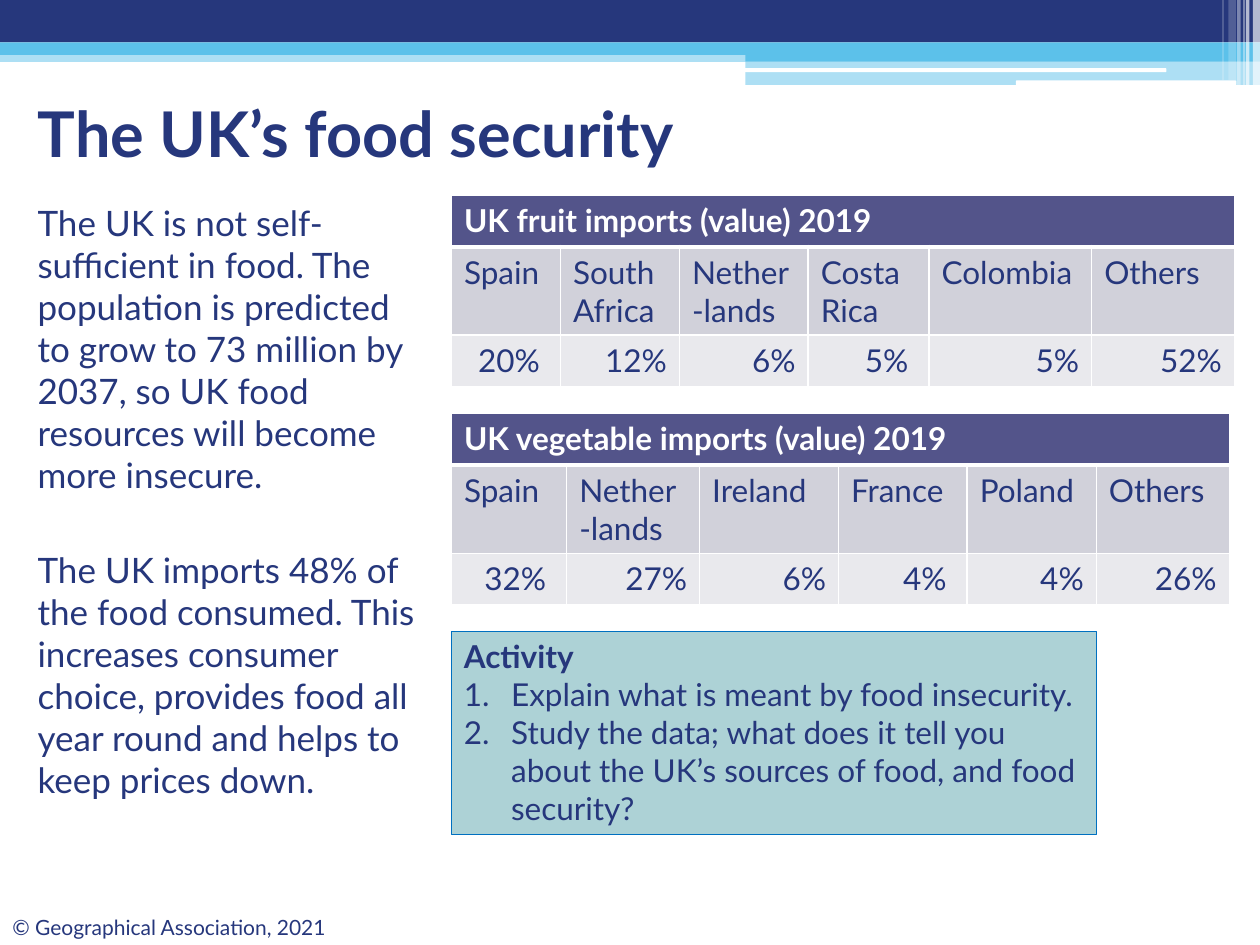
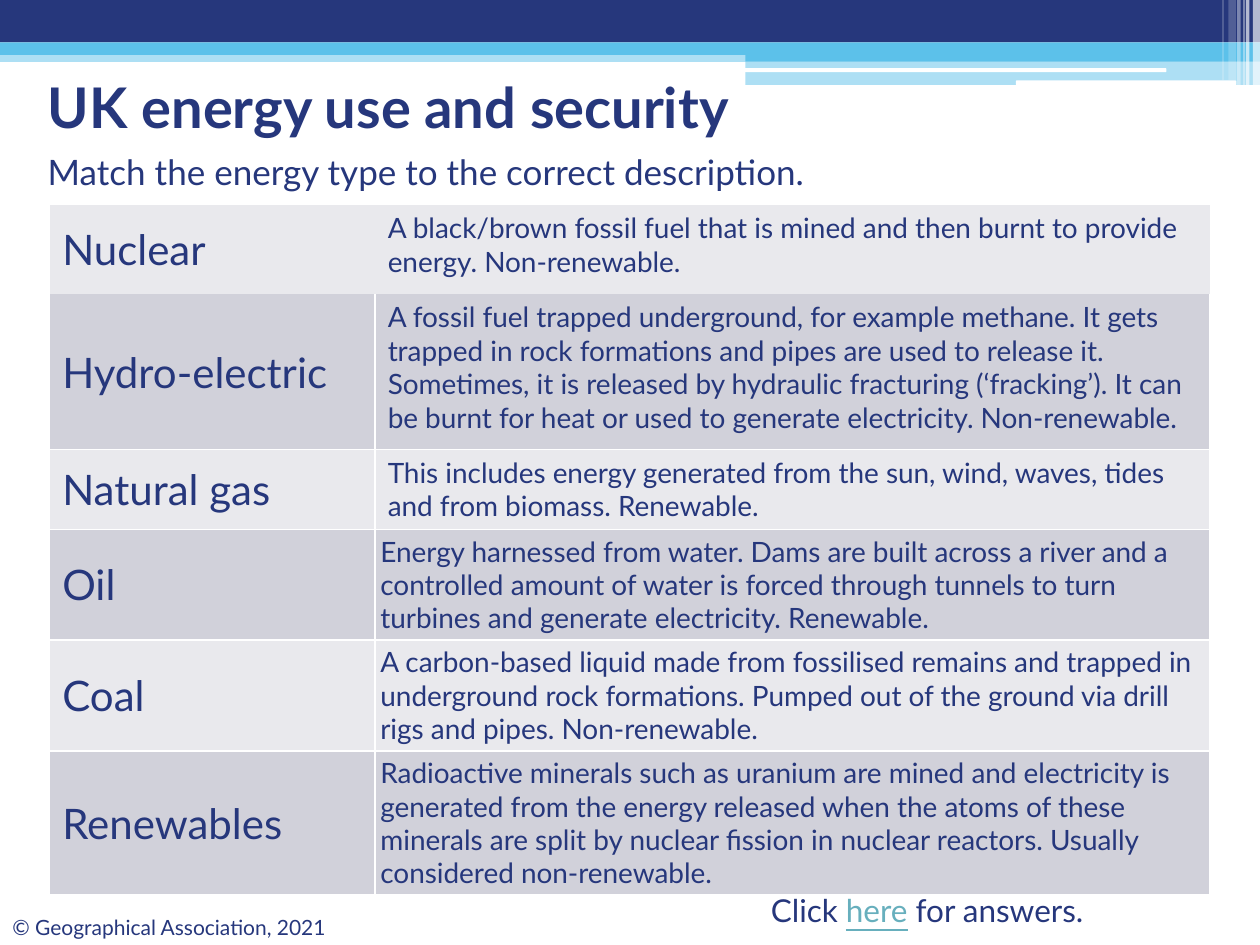
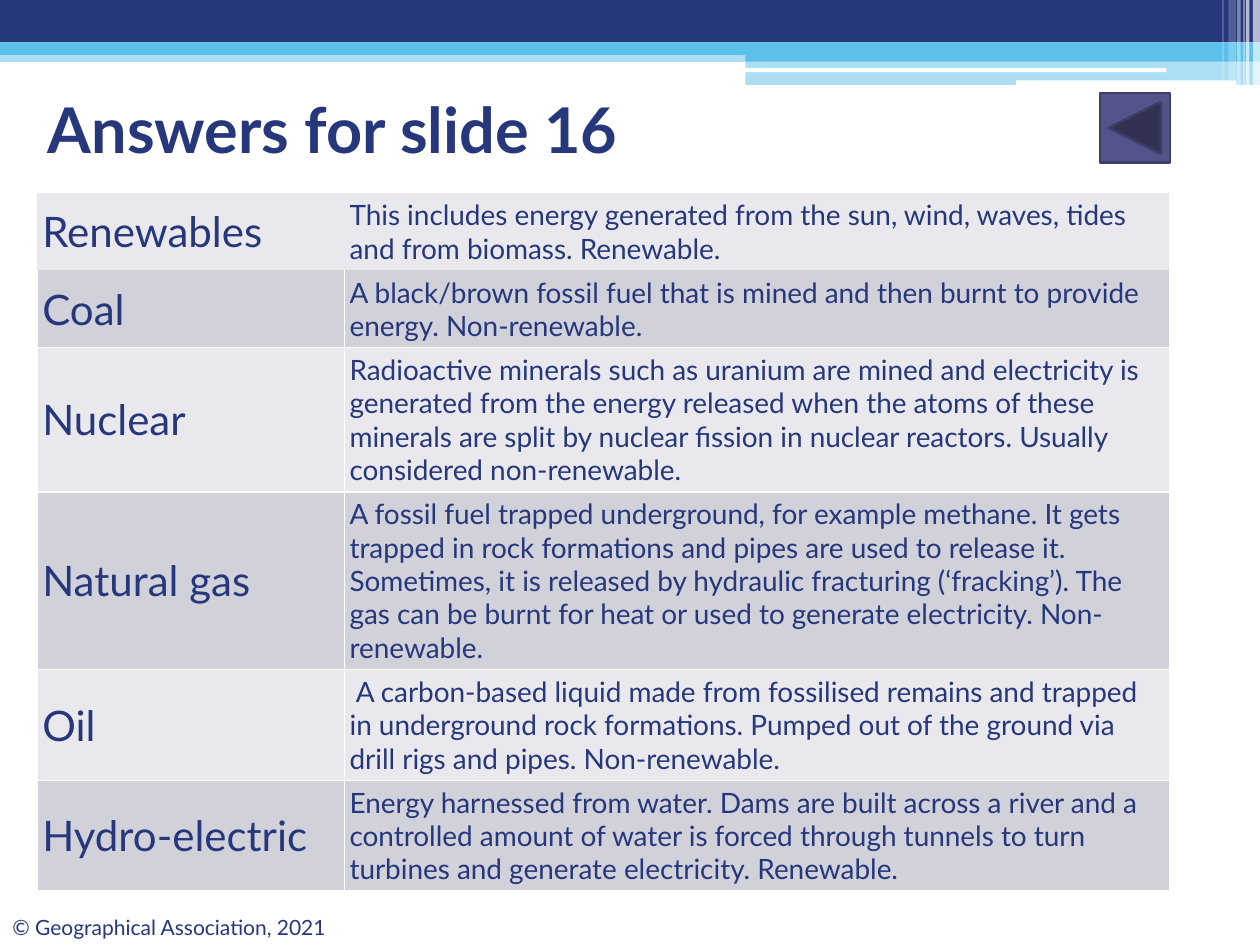
from dataclasses import dataclass

from lxml.etree import SubElement
from pptx import Presentation
from pptx.dml.color import RGBColor
from pptx.enum.shapes import MSO_SHAPE as Preset
from pptx.enum.text import MSO_ANCHOR as Anchor
from pptx.enum.text import MSO_AUTO_SIZE as AutoSize
from pptx.enum.text import PP_ALIGN as Align
from pptx.oxml import parse_xml
from pptx.oxml.ns import nsdecls, qn
from pptx.util import Pt


@dataclass(frozen=True)
class Theme:
    """Colours, type sizes and font of the presentation."""

    font: str = "Lato"
    navy: RGBColor = RGBColor(0x26, 0x37, 0x7C)
    sky: RGBColor = RGBColor(0x5C, 0xC1, 0xEA)
    white: RGBColor = RGBColor(0xFF, 0xFF, 0xFF)
    purple: RGBColor = RGBColor(0x53, 0x54, 0x8A)
    purple_edge: RGBColor = RGBColor(0x3D, 0x3E, 0x66)
    dark_row: RGBColor = RGBColor(0xD1, 0xD1, 0xDA)
    light_row: RGBColor = RGBColor(0xE9, 0xE9, 0xED)
    activity: RGBColor = RGBColor(0xAD, 0xD2, 0xD6)
    activity_edge: RGBColor = RGBColor(0x00, 0x70, 0xC0)
    link: RGBColor = RGBColor(0x67, 0xAF, 0xBD)
    title: int = 36
    compact_title: int = 32
    label: int = 24
    body: int = 20
    table: int = 18
    description: int = 16
    footer: int = 12


THEME = Theme()

BANDS = [
    (Preset.RECTANGLE, (0, 28.8, 720, 6.6), THEME.sky, 50),
    (Preset.RECTANGLE, (0, 0, 720, 24.2), THEME.navy, 100),
    (Preset.RECTANGLE, (0, 24.2, 720, 7.2), THEME.sky, 100),
    (Preset.RECTANGLE, (426, 28, 294, 7), THEME.sky, 100),
    (Preset.RECTANGLE, (426, 35, 294, 13.6), THEME.sky, 50),
    (Preset.ROUNDED_RECTANGLE, (425.5, 39, 241, 2.2), THEME.white, 100),
    (Preset.ROUNDED_RECTANGLE, (580.5, 46, 126, 2.6), THEME.white, 100),
]
STRIPES = [
    (715.9, 4.1, 48.6, 65),
    (711.9, 2, 48.6, 65),
    (710.5, 0.7, 48.6, 60),
    (707, 2, 48.6, 40),
    (702, 4.3, 46, 20),
    (698.5, 0.7, 46, 30),
]

FRUIT = {"Spain": "20% ", "South Africa": "12%", "Nether-lands": "6%",
         "Costa Rica": "5% ", "Colombia": "5%", "Others": "52%"}
VEGETABLES = {"Spain": "32% ", "Nether-lands": "27%", "Ireland": "6%",
              "France": "4% ", "Poland": "4%", "Others": "26%"}

DESCRIPTIONS = {
    "Renewables": "This includes energy generated from the sun, wind, waves, tides "
                  "and from biomass. Renewable.",
    "Coal": "A black/brown fossil fuel that is mined and then burnt to provide "
            "energy. Non-renewable.",
    "Nuclear": "Radioactive minerals such as uranium are mined and electricity is "
               "generated from the energy released when the atoms of these minerals "
               "are split by nuclear fission in nuclear reactors. Usually considered "
               "non-renewable.",
    "Natural gas": "A fossil fuel trapped underground, for example methane. It gets "
                   "trapped in rock formations and pipes are used to release it. "
                   "Sometimes, it is released by hydraulic fracturing (‘fracking’). "
                   "It can be burnt for heat or used to generate electricity. "
                   "Non-renewable.",
    "Oil": "A carbon-based liquid made from fossilised remains and trapped in "
           "underground rock formations. Pumped out of the ground via drill rigs and "
           "pipes. Non-renewable.",
    "Hydro-electric": "Energy harnessed from water. Dams are built across a river and "
                      "a controlled amount of water is forced through tunnels to turn "
                      "turbines and generate electricity. Renewable.",
}
PUZZLE = {"Nuclear": "Coal", "Hydro-electric": "Natural gas",
          "Natural gas": "Renewables", "Oil": "Hydro-electric",
          "Coal": "Oil", "Renewables": "Nuclear"}


def points(values):
    """Convert numbers to point lengths."""
    return [Pt(value) for value in values]


def write(paragraph, text, size=THEME.table, color=THEME.navy, bold=False,
          underline=False, align=Align.LEFT):
    """Add a formatted run to a paragraph."""
    paragraph.alignment = align
    run = paragraph.add_run()
    run.text = text
    font = run.font
    font.name, font.size, font.bold = THEME.font, Pt(size), bold
    font.underline = underline
    font.color.rgb = color


def add_box(slide, preset, box, fill, opacity=100, line=None, line_width=0.75):
    """Add a filled preset shape without a shadow."""
    shape = slide.shapes.add_shape(preset, *points(box))
    shape.shadow.inherit = False
    shape.fill.solid()
    shape.fill.fore_color.rgb = fill
    if opacity < 100:
        color = shape.element.spPr.find(".//" + qn("a:srgbClr"))
        SubElement(color, qn("a:alpha"), val=str(opacity * 1000))
    if line is None:
        shape.line.fill.background()
    else:
        shape.line.color.rgb = line
        shape.line.width = Pt(line_width)
    return shape


def add_text(slide, box, text=None, **text_format):
    """Add a wrapping text box and return its frame."""
    shape = slide.shapes.add_textbox(*points(box))
    shape.text_frame.word_wrap = True
    if text:
        write(shape.text_frame.paragraphs[0], text, **text_format)
    return shape


def add_slide(presentation, layout, title, box, size=THEME.title):
    """Add a slide and format its title placeholder."""
    slide = presentation.slides.add_slide(layout)
    shape = slide.shapes.title
    shape.left, shape.top, shape.width, shape.height = points(box)
    frame = shape.text_frame
    frame.auto_size = AutoSize.NONE
    frame.vertical_anchor = Anchor.MIDDLE
    write(frame.paragraphs[0], title, size=size, bold=True)
    return slide


def decorate(layout, slide):
    """Draw the bands, stripes and footer and move them to the layout."""
    shapes = [add_box(slide, *band) for band in BANDS]
    shapes += [add_box(slide, Preset.RECTANGLE, (left, 0, width, height),
                       THEME.white, opacity)
               for left, width, height, opacity in STRIPES]
    shapes.append(add_text(slide, (0, 519, 207, 21.8),
                           "© Geographical Association, 2021", size=THEME.footer))
    for number, shape in enumerate(shapes, start=100):
        shape.element.nvSpPr.cNvPr.id = number
        layout.shapes.element.append(shape.element)


def set_borders(cell, left=1, right=1, top=1, bottom=1):
    """Give a cell white borders of these widths, zero meaning none."""
    properties = cell._tc.get_or_add_tcPr()
    for index, (side, width) in enumerate(zip("LRTB", (left, right, top, bottom))):
        paint = (f'<a:solidFill><a:srgbClr val="{THEME.white}"/></a:solidFill>'
                 if width else "<a:noFill/>")
        properties.insert(index, parse_xml(
            f'<a:ln{side} {nsdecls("a")} w="{Pt(width)}">{paint}</a:ln{side}>'))


def add_table(slide, left, top, widths, heights):
    """Add an unbanded table with these column widths and row heights."""
    box = points((left, top, sum(widths), sum(heights)))
    table = slide.shapes.add_table(len(heights), len(widths), *box).table
    table.first_row = table.horz_banding = False
    for column, width in zip(table.columns, widths):
        column.width = Pt(width)
    for row, height in zip(table.rows, heights):
        row.height = Pt(height)
    return table


def fill_cell(cell, text, fill, anchor=Anchor.TOP, margin=None, **text_format):
    """Write a cell and set its fill, anchor and margins."""
    cell.fill.solid()
    cell.fill.fore_color.rgb = fill
    cell.vertical_anchor = anchor
    if margin is not None:
        cell.margin_left = cell.margin_right = Pt(margin)
        cell.margin_top = cell.margin_bottom = Pt(margin)
    if text:
        write(cell.text_frame.paragraphs[0], text, **text_format)


def add_import_table(slide, top, heading, shares, widths):
    """Add a table of import shares under a merged heading."""
    table = add_table(slide, 258, top, widths, (29.5, 50, 29.5))
    table.cell(0, 0).merge(table.cell(0, len(widths) - 1))
    for column, (country, share) in enumerate(shares.items()):
        header, name, value = (table.cell(row, column) for row in range(3))
        fill_cell(header, "" if column else heading, THEME.purple,
                  color=THEME.white, bold=True)
        fill_cell(name, country, THEME.dark_row)
        fill_cell(value, share, THEME.light_row, align=Align.RIGHT)
        set_borders(header, bottom=3)
        set_borders(name, top=3)
        set_borders(value)


def add_energy_table(slide, left, top, widths, heights, rows,
                     label_margin=None, roomy_rows=0):
    """Add a table of energy types and descriptions in alternating fills."""
    table = add_table(slide, left, top, widths, heights)
    for index, (label, description) in enumerate(rows.items()):
        fill = THEME.dark_row if index % 2 else THEME.light_row
        roomy = index < roomy_rows
        label_cell, description_cell = table.cell(index, 0), table.cell(index, 1)
        fill_cell(label_cell, label, fill, Anchor.MIDDLE, label_margin,
                  size=THEME.label)
        fill_cell(description_cell, description, fill,
                  Anchor.TOP if roomy else Anchor.MIDDLE, None if roomy else 3,
                  size=THEME.description)
        side, top_width = min(index, 1), int(index > 1)
        for cell in (label_cell, description_cell):
            set_borders(cell, side, side, top_width, side)


def add_activity(slide, box, heading, tasks):
    """Add the activity panel with its numbered tasks."""
    panel = add_box(slide, Preset.RECTANGLE, box, THEME.activity,
                    line=THEME.activity_edge)
    frame = panel.text_frame
    frame.word_wrap = True
    frame.vertical_anchor = Anchor.TOP
    write(frame.paragraphs[0], heading, bold=True)
    for task in tasks:
        paragraph = frame.add_paragraph()
        properties = paragraph._p.get_or_add_pPr()
        properties.set("marL", str(Pt(27)))
        properties.set("indent", str(Pt(-27)))
        SubElement(properties, qn("a:buFont"), typeface="+mj-lt")
        SubElement(properties, qn("a:buAutoNum"), type="arabicPeriod")
        write(paragraph, task)


def build_food_slide(slide):
    """Fill the food security slide."""
    frame = add_text(
        slide, (14.4, 111.6, 238.5, 391),
        "The UK is not self-sufficient in food. The population is predicted to grow "
        "to 73 million by 2037, so UK food resources will become more insecure.",
        size=THEME.body).text_frame
    paragraph = frame.add_paragraph()
    paragraph.space_before = Pt(30)
    write(paragraph, "The UK imports 48% of the food consumed. This increases "
          "consumer choice, provides food all year round and helps to keep prices "
          "down.", size=THEME.body)
    add_activity(slide, (258, 360.7, 368.5, 116.3), "Activity", [
        "Explain what is meant by food insecurity.",
        "Study the data; what does it tell you about the UK’s sources of food, "
        "and food security?"])
    add_import_table(slide, 111.6, "UK fruit imports (value) 2019", FRUIT,
                     (62.3, 68, 73.6, 69, 93, 81.6))
    add_import_table(slide, 236.3, "UK vegetable imports (value) 2019", VEGETABLES,
                     (65.8, 76, 79.4, 73.5, 73.8, 76))


def build_puzzle_slide(slide):
    """Fill the energy matching slide."""
    rows = {label: DESCRIPTIONS[answer] for label, answer in PUZZLE.items()}
    add_energy_table(slide, 28.4, 117, (186, 477), (51, 89, 45, 63, 63, 82), rows,
                     roomy_rows=3)
    prompt = add_text(slide, (433.4, 505.4, 198.7, 29)).text_frame.paragraphs[0]
    write(prompt, "Click ")
    write(prompt, "here", color=THEME.link, underline=True)
    write(prompt, " for answers.")
    add_text(slide, (20.2, 82.2, 642, 31.5),
             "Match the energy type to the correct description.", size=THEME.body)


def build_answer_slide(slide):
    """Fill the answers slide."""
    rows = dict(DESCRIPTIONS)
    rows["Natural gas"] = rows["Natural gas"].replace("It can", "The gas can")
    rows["Oil"] = " " + rows["Oil"]
    add_energy_table(slide, 21.2, 110.3, (175.6, 471.4), (44, 44, 82, 101, 63, 63),
                     rows, label_margin=3)
    add_box(slide, Preset.ACTION_BUTTON_BACK_OR_PREVIOUS, (628.5, 53.2, 40, 39.8),
            THEME.purple, line=THEME.purple_edge, line_width=1.5)


def main():
    """Build and save the presentation."""
    presentation = Presentation()
    presentation.slide_width, presentation.slide_height = Pt(720), Pt(540)
    layout = presentation.slide_layouts[5]
    food = add_slide(presentation, layout, "The UK’s food security",
                     (14.4, 47, 601, 57))
    decorate(layout, food)
    build_food_slide(food)
    build_puzzle_slide(add_slide(presentation, layout, "UK energy use and security",
                                 (20.2, 37, 648, 47.5), THEME.compact_title))
    build_answer_slide(add_slide(presentation, layout, "Answers for slide 16",
                                 (20.2, 31.2, 648, 84)))
    presentation.save("out.pptx")


if __name__ == "__main__":
    main()
